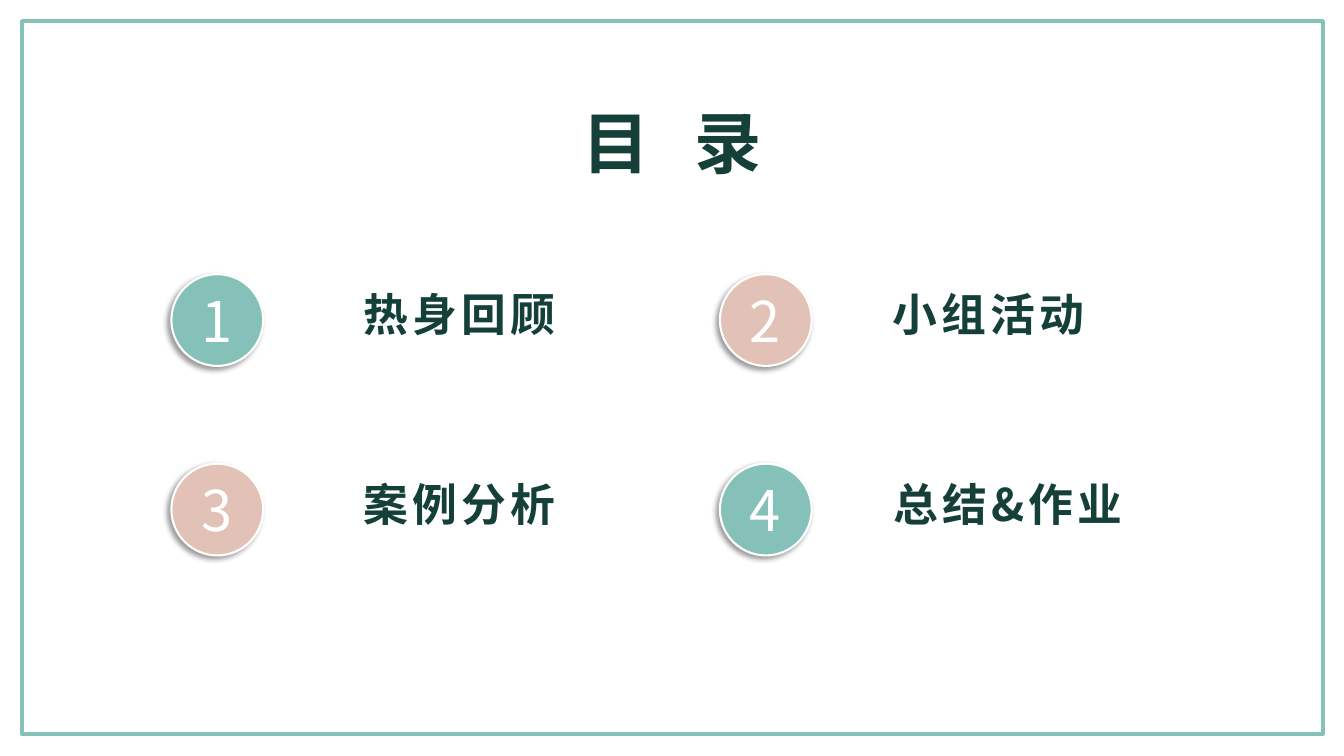
from lxml.etree import SubElement
from pptx import Presentation
from pptx.dml.color import RGBColor
from pptx.enum.shapes import MSO_SHAPE as Preset
from pptx.enum.text import MSO_ANCHOR as Anchor, MSO_AUTO_SIZE as AutoSize, PP_ALIGN as Align
from pptx.oxml.ns import qn
from pptx.util import Inches, Pt

COLORS = {"mint": "85C1B9", "blush": "E2C2B6", "ink": "15403A",
          "white": "FFFFFF", "shadow": "000000"}
FONT = "Noto Sans CJK SC"
COLUMNS = (1.7, 7.14)
ROWS = (2.72, 4.6)
BADGE = 0.91
TOPICS = (("热身回顾", "mint", 1.1), ("小组活动", "blush", 0.91),
          ("案例分析", "blush", 1.1), ("总结&作业", "mint", 1.1))


def color(name):
    return RGBColor.from_string(COLORS[name])


def box(left, top, width, height):
    return [Inches(length) for length in (left, top, width, height)]


def add_text(frame, text, size, ink="ink", bold=False, spacing=0):
    paragraph = frame.paragraphs[0]
    paragraph.alignment = Align.CENTER
    run = paragraph.add_run()
    run.text = text
    run.font.size = Pt(size)
    run.font.bold = bold
    run.font.name = FONT
    run.font.color.rgb = color(ink)
    properties = run.font._element
    SubElement(properties, qn("a:ea")).set("typeface", FONT)
    if spacing:
        properties.set("spc", str(int(spacing * 100)))


def fit(frame, wrap):
    frame.word_wrap = wrap
    frame.auto_size = AutoSize.SHAPE_TO_FIT_TEXT
    frame.vertical_anchor = Anchor.TOP


def add_soft_shadow(badge):
    effects = badge._element.spPr.find(qn("a:effectLst"))
    shadow = SubElement(effects, qn("a:outerShdw"), blurRad=str(Pt(4)), dist=str(Pt(3)),
                        dir=str(135 * 60000), algn="tr", rotWithShape="0")
    tint = SubElement(shadow, qn("a:srgbClr"), val=COLORS["shadow"])
    SubElement(tint, qn("a:alpha"), val="40000")


def add_frame(slide):
    border = slide.shapes.add_shape(Preset.RECTANGLE, *box(0.22, 0.21, 12.9, 7.07))
    border.shadow.inherit = False
    border.fill.background()
    border.line.color.rgb = color("mint")
    border.line.width = Pt(3)


def add_badge(slide, number, left, top, fill):
    group = slide.shapes.add_group_shape()
    badge = group.shapes.add_shape(Preset.OVAL, *box(left, top, BADGE, BADGE))
    badge.shadow.inherit = False
    badge.fill.solid()
    badge.fill.fore_color.rgb = color(fill)
    badge.line.color.rgb = color("white")
    badge.line.width = Pt(1.5)
    add_soft_shadow(badge)
    digit = group.shapes.add_textbox(*box(left + 0.18, top + 0.07, 0.54, 0.77))
    fit(digit.text_frame, wrap=False)
    add_text(digit.text_frame, str(number), 40, "white")


def add_topic(slide, index, label, fill, offset):
    row, column = divmod(index, len(COLUMNS))
    left, top = COLUMNS[column], ROWS[row]
    add_badge(slide, index + 1, left, top, fill)
    topic = slide.shapes.add_textbox(*box(left + offset, top + 0.08, 3.51, 0.64))
    fit(topic.text_frame, wrap=True)
    add_text(topic.text_frame, label, 32, bold=True, spacing=3)


def add_heading(slide):
    heading = slide.shapes.title
    heading.left, heading.top, heading.width, heading.height = box(5.59, 0.96, 2.15, 0.91)
    fit(heading.text_frame, wrap=False)
    for part, spacing in (("目", 0), (" ", 21.5), ("录", 0)):
        add_text(heading.text_frame, part, 48, bold=True, spacing=spacing)


def main():
    deck = Presentation()
    deck.slide_width, deck.slide_height = Inches(13.33), Inches(7.5)
    slide = deck.slides.add_slide(deck.slide_layouts[5])
    add_frame(slide)
    for index, (label, fill, offset) in enumerate(TOPICS):
        add_topic(slide, index, label, fill, offset)
    add_heading(slide)
    deck.save("out.pptx")


if __name__ == "__main__":
    main()
